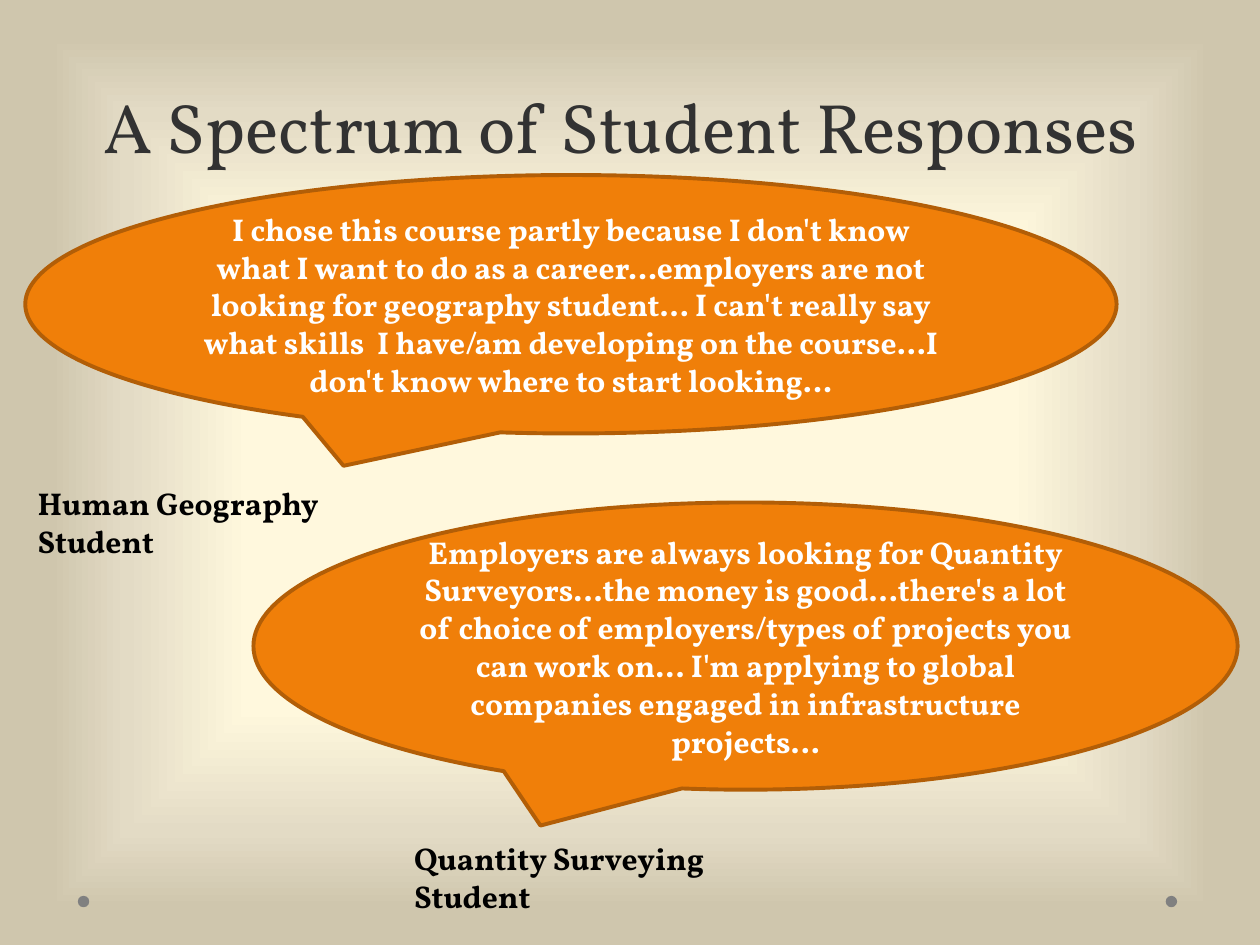
from dataclasses import dataclass

from lxml.etree import SubElement
from pptx import Presentation
from pptx.dml.color import RGBColor
from pptx.enum.shapes import MSO_SHAPE
from pptx.enum.text import MSO_ANCHOR, PP_ALIGN
from pptx.oxml.ns import qn
from pptx.shapes.autoshape import Shape
from pptx.slide import Slide
from pptx.util import Cm, Pt

FONT = "Vollkorn"
COLORS = {
    "title": "323232",
    "label": "000000",
    "quote": "FFFFFF",
    "bubble": "F07F09",
    "outline": "B25E07",
    "dot": "808080",
}
BACKGROUND_STOPS = {50: "FFF8DD", 76: "E3DBC5", 92: "CFC6AD"}
DOT_SIZE = 0.23
DOT_TOP = 18.06
DOT_LEFTS = (1.57, 23.5)


@dataclass
class Box:
    """Position and size in centimetres."""
    left: float
    top: float
    width: float
    height: float

    def lengths(self) -> tuple[Cm, Cm, Cm, Cm]:
        return Cm(self.left), Cm(self.top), Cm(self.width), Cm(self.height)


@dataclass
class Response:
    quote: str
    bubble: Box
    student: str
    label: Box


RESPONSES = [
    Response(
        "I chose this course partly because I don't know what I want to do as a "
        "career...employers are not looking for geography student... I can't really "
        "say what skills  I have/am developing on the course...I don't know where "
        "to start looking...",
        Box(0.51, 3.53, 22, 5.21),
        "Human Geography\nStudent",
        Box(0.51, 9.63, 8, 1.8),
    ),
    Response(
        "Employers are always looking for Quantity Surveyors...the money is "
        "good...there's a lot of choice of employers/types of projects you can work "
        "on... I'm applying to global companies engaged in infrastructure projects...",
        Box(5.11, 10.13, 19.84, 5.79),
        "Quantity Surveying Student",
        Box(8.1, 16.79, 6.6, 1.8),
    ),
]


def rgb(name: str) -> RGBColor:
    return RGBColor.from_string(COLORS[name])


def set_background(s: Slide) -> None:
    """Fill the background with a gradient spreading out from the centre."""
    s.background.fill.gradient()
    grad = s.element.find(".//" + qn("a:gradFill"))
    for child in list(grad):
        grad.remove(child)
    stops = SubElement(grad, qn("a:gsLst"))
    for percent, color in BACKGROUND_STOPS.items():
        stop = SubElement(stops, qn("a:gs"), pos=str(percent * 1000))
        SubElement(stop, qn("a:srgbClr"), val=color)
    shade = SubElement(grad, qn("a:path"), {"path": "shape"})
    SubElement(shade, qn("a:fillToRect"), {side: "50000" for side in "ltrb"})


def write(sp: Shape, text: str, color: str, size: int = 18, bold: bool = True,
          align: PP_ALIGN = PP_ALIGN.LEFT, anchor: MSO_ANCHOR = MSO_ANCHOR.TOP) -> None:
    tf = sp.text_frame
    tf.word_wrap = True
    tf.vertical_anchor = anchor
    tf.text = text
    for p in tf.paragraphs:
        p.alignment = align
        for r in p.runs:
            r.font.name = FONT
            r.font.size = Pt(size)
            r.font.bold = bold
            r.font.color.rgb = rgb(color)


def add_filled(s: Slide, kind: MSO_SHAPE, box: Box, color: str) -> Shape:
    sp = s.shapes.add_shape(kind, *box.lengths())
    sp.shadow.inherit = False
    sp.fill.solid()
    sp.fill.fore_color.rgb = rgb(color)
    sp.line.fill.background()
    return sp


def add_title(s: Slide, text: str) -> None:
    sp = s.shapes.add_textbox(*Box(0.89, 0.91, 23.24, 2.59).lengths())
    write(sp, text, "title", 40, False, PP_ALIGN.CENTER, MSO_ANCHOR.BOTTOM)
    sp.text_frame.paragraphs[0].line_spacing = Pt(58)


def add_response(s: Slide, response: Response) -> None:
    label = s.shapes.add_textbox(*response.label.lengths())
    write(label, response.student, "label")
    bubble = add_filled(s, MSO_SHAPE.OVAL_CALLOUT, response.bubble, "bubble")
    bubble.line.color.rgb = rgb("outline")
    bubble.line.width = Pt(2.25)
    write(bubble, response.quote, "quote",
          align=PP_ALIGN.CENTER, anchor=MSO_ANCHOR.MIDDLE)


def main() -> None:
    prs = Presentation()
    prs.slide_width, prs.slide_height = Cm(25.4), Cm(19.05)
    s = prs.slides.add_slide(prs.slide_layouts[6])
    set_background(s)
    for left in DOT_LEFTS:
        add_filled(s, MSO_SHAPE.OVAL, Box(left, DOT_TOP, DOT_SIZE, DOT_SIZE), "dot")
    add_title(s, "A Spectrum of Student Responses")
    for response in RESPONSES:
        add_response(s, response)
    prs.save("out.pptx")


if __name__ == "__main__":
    main()
